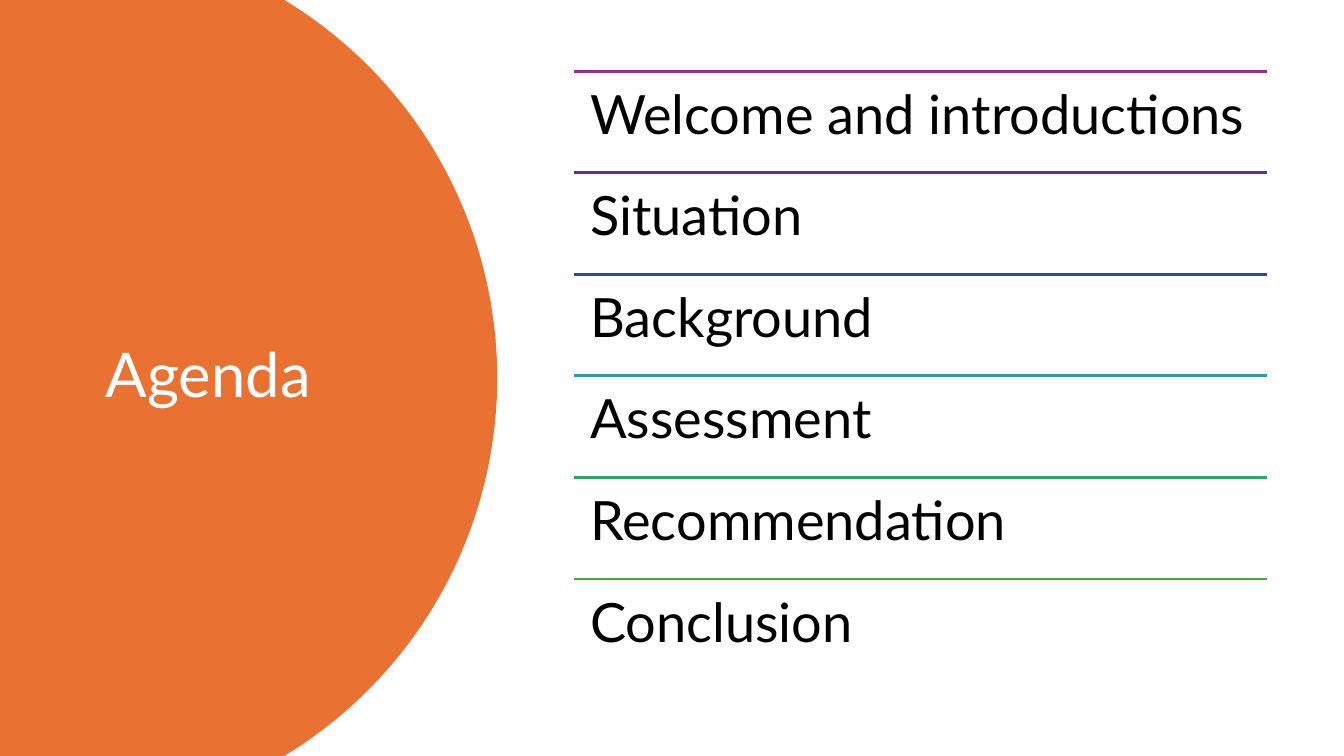
import math
from dataclasses import dataclass

import pptx
import pptx.dml.color
import pptx.enum.shapes
import pptx.enum.text
import pptx.oxml
import pptx.oxml.ns
import pptx.util

Pt = pptx.util.Pt
RGB = pptx.dml.color.RGBColor.from_string
Anchor = pptx.enum.text.MSO_ANCHOR


@dataclass(frozen=True)
class Theme:
    font: str = "Lato"
    panel: str = "E97132"
    title: str = "FFFFFF"
    body: str = "000000"
    title_size: float = 33
    body_size: float = 29
    rule_width: float = 1.5


theme = Theme()


def add_text(shapes, text, left, top, width, height, *, size, color,
             anchor=Anchor.TOP, inset_x=7.2, inset_y=3.6):
    box = shapes.add_textbox(Pt(left), Pt(top), Pt(width), Pt(height))
    frame = box.text_frame
    frame.word_wrap = True
    frame.vertical_anchor = anchor
    frame.margin_left = frame.margin_right = Pt(inset_x)
    frame.margin_top = frame.margin_bottom = Pt(inset_y)
    para = frame.paragraphs[0]
    para.line_spacing = 0.9
    span = para.add_run()
    span.text = text
    span.font.name = theme.font
    span.font.size = Pt(size)
    span.font.color.rgb = RGB(color)


slide_width, slide_height = 720, 405
deck = pptx.Presentation()
deck.slide_width, deck.slide_height = Pt(slide_width), Pt(slide_height)
slide = deck.slides.add_slide(deck.slide_layouts[6])

# Left panel: a circle cut off by the slide's left, top and bottom edges
center_x, center_y, radius = 29.6, slide_height / 2, 236.8
half_angle = math.asin(center_y / radius)
steps = 120
arc = []
for step in range(steps + 1):
    angle = half_angle * (2 * step / steps - 1)
    arc.append((Pt(center_x + radius * math.cos(angle)),
                Pt(center_y + radius * math.sin(angle))))
outline = slide.shapes.build_freeform(0, 0)
outline.add_line_segments(arc + [(0, Pt(slide_height))], close=True)
panel = outline.convert_to_shape()
panel.shadow.inherit = False
panel.fill.solid()
panel.fill.fore_color.rgb = RGB(theme.panel)
panel.line.fill.background()

add_text(slide.shapes, "Agenda", 49.5, 38, 174, 329,
         size=theme.title_size, color=theme.title, anchor=Anchor.MIDDLE)

# Agenda: equal rows, each under its own coloured rule
agenda = [
    ("Welcome and introductions", "A02B93"),
    ("Situation", "5F2CA1"),
    ("Background", "2C49A3"),
    ("Assessment", "2D9AA4"),
    ("Recommendation", "2DA65F"),
    ("Conclusion", "4EA72E"),
]
left, first_top, width, row_height = 307.5, 38.2, 371.5, 54.4
rows = slide.shapes.add_group_shape().shapes
for index, (topic, color) in enumerate(agenda):
    top = first_top + index * row_height
    rule = rows.add_connector(pptx.enum.shapes.MSO_CONNECTOR.STRAIGHT,
                              Pt(left), Pt(top), Pt(left + width), Pt(top))
    rule.line.color.rgb = RGB(color)
    rule.line.width = Pt(theme.rule_width)
    rule.element.spPr.append(
        pptx.oxml.parse_xml(f"<a:effectLst {pptx.oxml.ns.nsdecls('a')}/>"))
    add_text(rows, topic, left, top, width, row_height,
             size=theme.body_size, color=theme.body, inset_x=8.7, inset_y=8.7)

deck.save("out.pptx")
